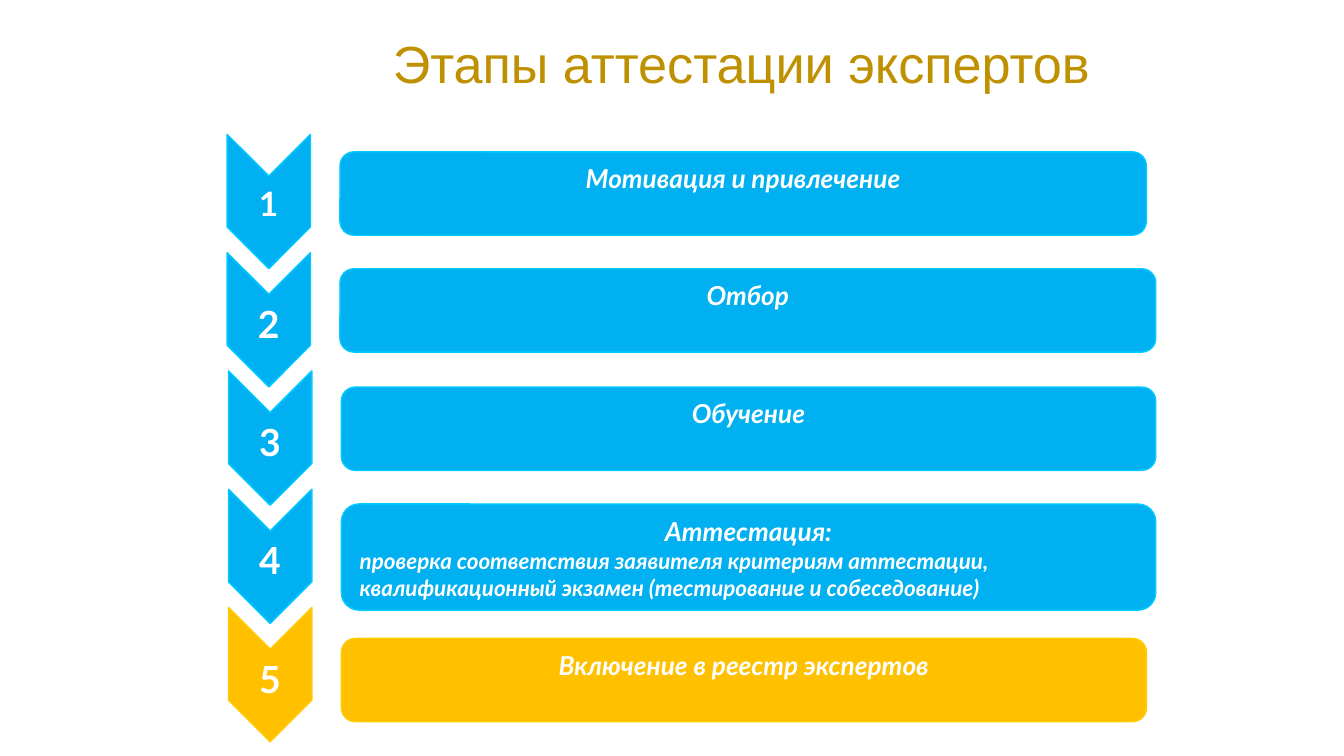
from pptx import Presentation
from pptx.dml.color import RGBColor
from pptx.enum.shapes import MSO_SHAPE as Shape
from pptx.enum.text import MSO_ANCHOR as Anchor, PP_ALIGN as Align
from pptx.util import Inches, Pt

BLUE, CYAN = RGBColor(0x00, 0xB0, 0xF0), RGBColor(0x00, 0xCC, 0xFF)
AMBER, YELLOW = RGBColor(0xFF, 0xC0, 0x00), RGBColor(0xFF, 0xCC, 0x00)
GOLD = RGBColor(0xBF, 0x90, 0x00)
WHITE = RGBColor(0xFF, 0xFF, 0xFF)

TITLE = "Этапы аттестации экспертов"
# heading, details, bar left, bar width, bar height, chevron left, number size
STAGES = [
    ("Мотивация и привлечение", [], 2.53, 6, 0.62, 1.5, 18),
    ("Отбор", [], 2.53, 6.07, 0.62, 1.5, 20),
    ("Обучение", [], 2.54, 6.06, 0.62, 1.51, 20),
    ("Аттестация:",
     ["проверка соответствия заявителя критериям аттестации,",
      "квалификационный экзамен (тестирование и собеседование)"],
     2.54, 6.06, 0.79, 1.51, 20),
    ("Включение в реестр экспертов", [], 2.54, 5.99, 0.62, 1.51, 20),
]
BAR_TOPS = [1.13, 2, 2.88, 3.75, 4.75]
CHEVRON_TOP, CHEVRON_STEP = 1.19, 0.88
CHEVRON_LENGTH, CHEVRON_WIDTH = 1, 0.62


def write(frame, text, size, font="Lato", color=WHITE, bold=True,
          italic=False, align=Align.CENTER):
    """Fill the first paragraph if it is empty, otherwise add one."""
    para = frame.paragraphs[0] if not frame.text else frame.add_paragraph()
    para.alignment = align
    span = para.add_run()
    span.text = text
    span.font.name, span.font.size = font, Pt(size)
    span.font.bold, span.font.italic = bold, italic
    span.font.color.rgb = color


def add_block(page, kind, place, fill, line):
    block = page.shapes.add_shape(kind, *map(Inches, place))
    block.shadow.inherit = False
    block.fill.solid()
    block.fill.fore_color.rgb = fill
    block.line.color.rgb = line
    block.line.width = Pt(0.75)
    block.text_frame.word_wrap = True
    block.text_frame.vertical_anchor = Anchor.TOP
    return block


def add_stage(page, index, stage):
    heading, details, left, width, height, chevron_left, number_size = stage
    last = index == len(STAGES) - 1
    colors = (AMBER, YELLOW) if last else (BLUE, CYAN)

    place = (left, BAR_TOPS[index], width, height)
    bar = add_block(page, Shape.FLOWCHART_ALTERNATE_PROCESS, place, *colors)
    write(bar.text_frame, heading, 14, italic=True)
    for detail in details:
        write(bar.text_frame, detail, 12, italic=True, align=Align.LEFT)

    place = (chevron_left, CHEVRON_TOP + index * CHEVRON_STEP,
             CHEVRON_LENGTH, CHEVRON_WIDTH)
    chevron = add_block(page, Shape.CHEVRON, place, *colors)
    chevron.adjustments[0] = 0.5
    chevron.rotation = 90
    # Turn the text back so that the number stands upright
    chevron.text_frame._txBody.bodyPr.set("vert", "vert270")
    chevron.text_frame.margin_top = Inches(0.1)
    write(chevron.text_frame, str(index + 1), number_size)


def main():
    deck = Presentation()
    deck.slide_width = Inches(10)
    deck.slide_height = deck.slide_width * 9 // 16
    page = deck.slides.add_slide(deck.slide_layouts[6])

    title = page.shapes.add_textbox(
        Inches(1.97), Inches(0.29), Inches(7.09), Inches(0.45)).text_frame
    title.word_wrap = True
    title.vertical_anchor = Anchor.BOTTOM
    title.margin_top = title.margin_bottom = Inches(0.04)
    write(title, TITLE, 28, font="Arial", color=GOLD, bold=False)

    for index, stage in enumerate(STAGES):
        add_stage(page, index, stage)
    deck.save("out.pptx")


if __name__ == "__main__":
    main()
